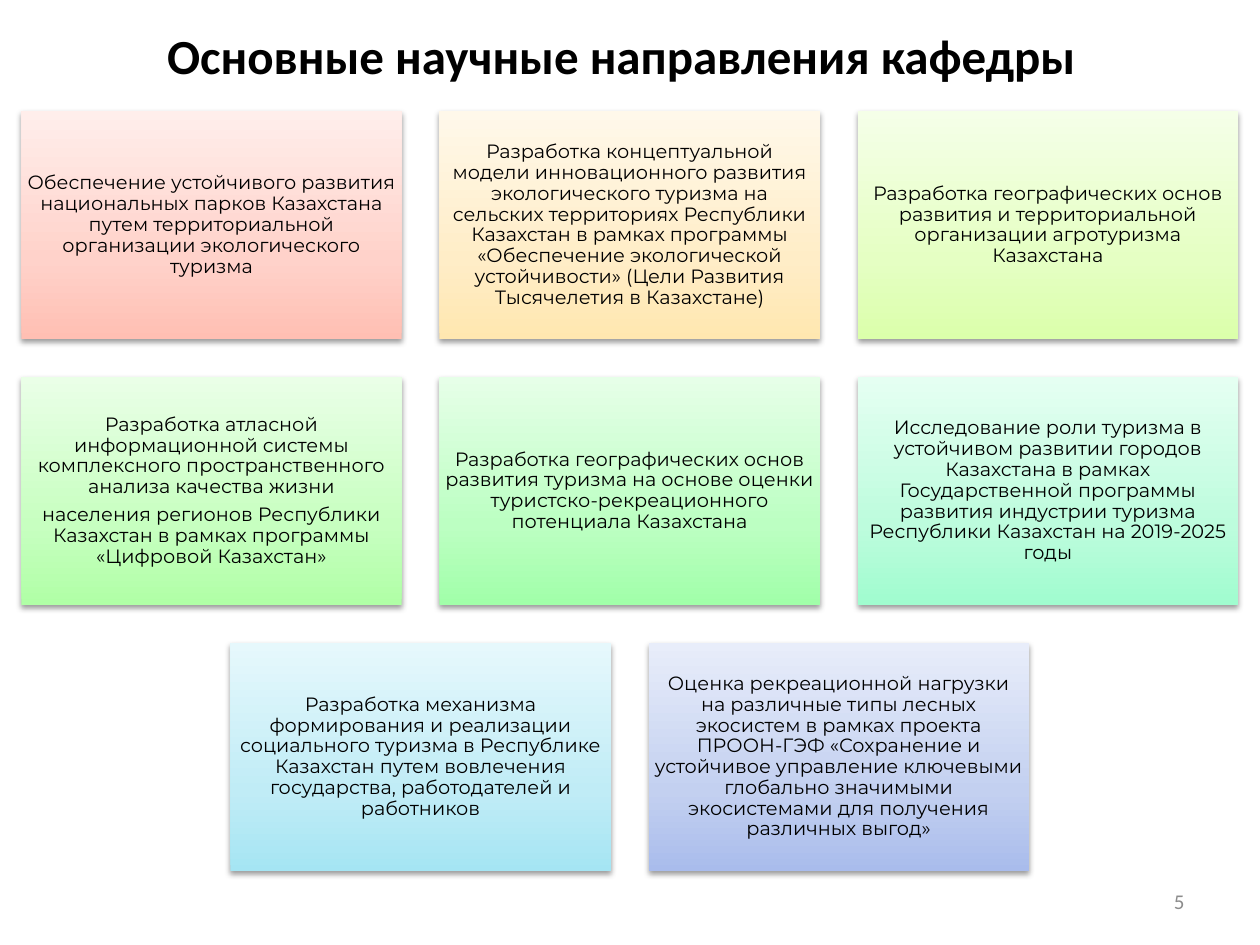
from lxml.etree import SubElement
from pptx import Presentation
from pptx.dml.color import RGBColor
from pptx.enum.shapes import MSO_SHAPE
from pptx.enum.text import MSO_ANCHOR, PP_ALIGN
from pptx.oxml.ns import qn
from pptx.util import Cm, Pt

COLOURS = {
    "text": "000000",
    "number": "8C8C8C",
    "shadow": "000000",
    "red": ("FFBFB3", "FFD2CA", "FFEEEB"),
    "orange": ("FFE7B0", "FFEDC7", "FFF8EA"),
    "lime": ("DBFFAB", "E5FFC3", "F5FFE8"),
    "green": ("B0FFA6", "C7FFC0", "EAFFE7"),
    "emerald": ("A1FFA9", "BCFFC2", "E6FFE8"),
    "mint": ("A0FCCF", "BDFCDD", "E5FFF2"),
    "cyan": ("A5E5F3", "C0ECF6", "E6F8FC"),
    "blue": ("A9BCEC", "C3D0F0", "E8EDFA"),
}

ROWS = [
    [
        ("red", ["Обеспечение устойчивого развития национальных парков Казахстана путем "
                 "территориальной организации экологического туризма"]),
        ("orange", ["Разработка концептуальной модели инновационного развития экологического "
                    "туризма на сельских территориях Республики Казахстан в рамках программы "
                    "«Обеспечение экологической устойчивости» (Цели Развития Тысячелетия "
                    "в Казахстане)"]),
        ("lime", ["Разработка географических основ развития и территориальной организации "
                  "агротуризма Казахстана"]),
    ],
    [
        ("green", ["Разработка атласной информационной системы комплексного "
                   "пространственного анализа качества жизни",
                   "населения регионов Республики Казахстан в рамках программы "
                   "«Цифровой Казахстан»"]),
        ("emerald", ["Разработка географических основ развития туризма на основе оценки "
                     "туристско-рекреационного потенциала Казахстана"]),
        ("mint", ["Исследование роли туризма в устойчивом развитии городов Казахстана в рамках "
                  "Государственной программы развития индустрии туризма Республики Казахстан "
                  "на 2019-2025 годы"]),
    ],
    [
        ("cyan", ["Разработка механизма формирования и реализации социального туризма в "
                  "Республике Казахстан путем вовлечения государства, работодателей и "
                  "работников"]),
        ("blue", ["Оценка рекреационной нагрузки на различные типы лесных экосистем в рамках "
                  "проекта ПРООН-ГЭФ «Сохранение и устойчивое управление ключевыми глобально "
                  "значимыми экосистемами для получения различных выгод»"]),
    ],
]


def write(frame, paragraphs, font="Calibri", size=12, colour="text", bold=False,
          align=PP_ALIGN.CENTER, spacing=1.0, after=0, inset=(0.25, 0.13)):
    frame.word_wrap = True
    frame.vertical_anchor = MSO_ANCHOR.MIDDLE
    frame.margin_left = frame.margin_right = Cm(inset[0])
    frame.margin_top = frame.margin_bottom = Cm(inset[1])
    for index, text in enumerate(paragraphs):
        para = frame.add_paragraph() if index else frame.paragraphs[0]
        para.alignment = align
        para.line_spacing = spacing
        para.space_before = Pt(0)
        para.space_after = Pt(after)
        span = para.add_run()
        span.text = text
        span.font.name = font
        span.font.size = Pt(size)
        span.font.bold = bold
        span.font.color.rgb = RGBColor.from_string(COLOURS[colour])


def shade(box, stops):
    box.fill.gradient()
    box.fill.gradient_angle = 90
    box.line.fill.background()
    box.shadow.inherit = False
    properties = box._element.spPr
    stop_list = properties.find(qn("a:gradFill")).find(qn("a:gsLst"))
    for old_stop in list(stop_list):
        stop_list.remove(old_stop)
    for position, colour in zip((0, 35, 100), stops):
        stop = SubElement(stop_list, qn("a:gs"), pos=str(position * 1000))
        SubElement(stop, qn("a:srgbClr"), val=colour)
    shadow = SubElement(properties.find(qn("a:effectLst")), qn("a:outerShdw"),
                        blurRad="40000", dist="20000", dir="5400000", rotWithShape="0")
    tint = SubElement(shadow, qn("a:srgbClr"), val=COLOURS["shadow"])
    SubElement(tint, qn("a:alpha"), val="38000")


deck = Presentation()
deck.slide_width, deck.slide_height = Cm(25.4), Cm(19.05)
page = deck.slides.add_slide(deck.slide_layouts[5])

title = page.shapes.title
title.left, title.top, title.width, title.height = Cm(1.09), Cm(0.61), Cm(22.86), Cm(0.99)
write(title.text_frame, ["Основные научные направления кафедры"], size=28, bold=True)

box_width, box_height, gap = 7.67, 4.6, 0.76
grid_left, grid_top = 0.43, 2.24
column_step, row_step = box_width + gap, box_height + gap

for row_index, row in enumerate(ROWS):
    row_left = grid_left + (3 - len(row)) * column_step / 2
    for column_index, (colour, paragraphs) in enumerate(row):
        box = page.shapes.add_shape(
            MSO_SHAPE.RECTANGLE,
            Cm(row_left + column_index * column_step), Cm(grid_top + row_index * row_step),
            Cm(box_width), Cm(box_height))
        shade(box, COLOURS[colour])
        write(box.text_frame, paragraphs, font="Montserrat", size=11,
              spacing=0.9, after=4.2, inset=(0.12, 0.12))

number = page.shapes.add_textbox(Cm(18.21), Cm(17.65), Cm(5.92), Cm(1.02))
write(number.text_frame, ["5"], colour="number", align=PP_ALIGN.RIGHT)

deck.save("out.pptx")
